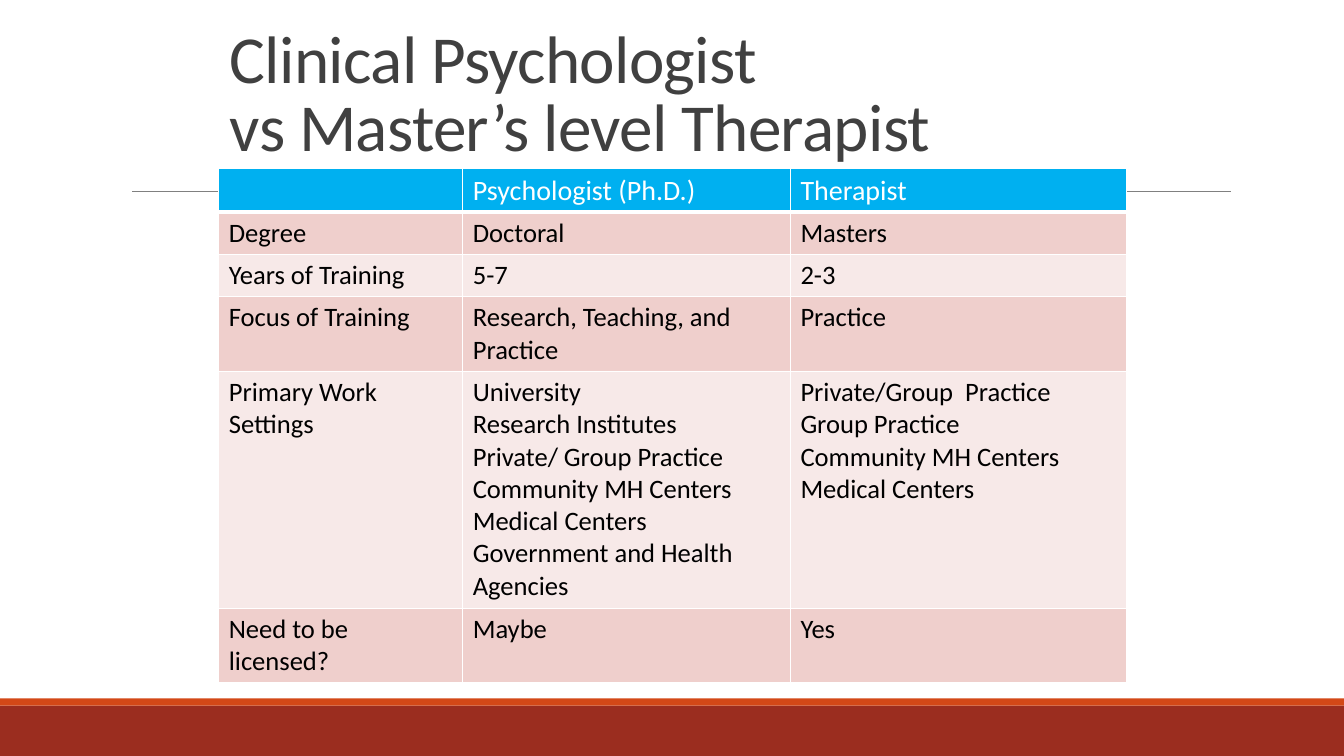
from lxml import etree
from pptx import Presentation
from pptx import util as u
from pptx.dml.color import RGBColor
from pptx.enum import shapes, text
from pptx.oxml.ns import qn

HEADER, BANDS = "00B0F0", ("F7E9E8", "EFCFCC")
COLS = (2.42, 3.25, 3.33)
HEIGHTS = (0.43, 0.42, 0.42, 0.74, 2.35, 0.74)
ROWS = [
    ("", "Psychologist (Ph.D.)", "Therapist"),
    ("Degree", "Doctoral", "Masters"),
    ("Years of Training", "5-7", "2-3"),
    ("Focus of Training", "Research, Teaching, and Practice", "Practice"),
    ("Primary Work Settings",
     "University\nResearch Institutes\nPrivate/ Group Practice\n"
     "Community MH Centers\nMedical Centers\nGovernment and Health Agencies",
     "Private/Group  Practice\nGroup Practice\nCommunity MH Centers\nMedical Centers"),
    ("Need to be licensed?", "Maybe", "Yes"),
]


def color(code):
    return RGBColor.from_string(code)


class Deck:
    font = "Calibri"

    def __init__(self):
        self.prs = Presentation()
        self.prs.slide_width, self.prs.slide_height = u.Inches(13.33), u.Inches(7.5)
        self.slide = self.prs.slides.add_slide(self.prs.slide_layouts[6])

    def run(self, para, words, size, code):
        run = para.add_run()
        run.text = words
        font = run.font
        font.name, font.size, font.bold = self.font, u.Pt(size), False
        font.color.rgb = color(code)
        return run

    def bar(self, top, height, code):
        box = self.slide.shapes.add_shape(
            shapes.MSO_SHAPE.RECTANGLE, 0, u.Inches(top),
            self.prs.slide_width, u.Inches(height))
        box.shadow.inherit = False
        box.fill.solid()
        box.fill.fore_color.rgb = color(code)
        box.line.fill.background()

    def rule(self, left, right, top, code, width):
        line = self.slide.shapes.add_connector(
            shapes.MSO_CONNECTOR.STRAIGHT, u.Inches(left), u.Inches(top),
            u.Inches(right), u.Inches(top))
        line.line.color.rgb = color(code)
        line.line.width = u.Pt(width)
        etree.SubElement(line._element.spPr, qn("a:effectLst"))

    def title(self, left, top, width, height, lines):
        box = self.slide.shapes.add_textbox(*map(u.Inches, (left, top, width, height)))
        frame = box.text_frame
        frame.word_wrap = True
        frame.vertical_anchor = text.MSO_ANCHOR.BOTTOM
        para = frame.paragraphs[0]
        para.line_spacing = 0.85
        for i, words in enumerate(lines):
            if i:
                para.add_line_break()
            run = self.run(para, words, 48, "404040")
            run.font._element.set("spc", "-50")

    def edges(self, cell, code, low):
        """Draw four 1 pt borders, the bottom one `low` points wide."""
        props = cell._tc.get_or_add_tcPr()
        for i, side in enumerate("LRTB"):
            width = u.Pt(low if side == "B" else 1)
            edge = etree.Element(qn("a:ln" + side), w=str(width))
            fill = etree.SubElement(edge, qn("a:solidFill"))
            etree.SubElement(fill, qn("a:srgbClr"), val=code)
            props.insert(i, edge)

    def table(self, left, top):
        grid = self.slide.shapes.add_table(
            len(ROWS), len(COLS), u.Inches(left), u.Inches(top),
            u.Inches(sum(COLS)), u.Inches(sum(HEIGHTS))).table
        for col, width in zip(grid.columns, COLS):
            col.width = u.Inches(width)
        for r, row in enumerate(ROWS):
            grid.rows[r].height = u.Inches(HEIGHTS[r])
            for c, words in enumerate(row):
                self.cell(grid.cell(r, c), words, r)

    def cell(self, cell, words, r):
        cell.fill.solid()
        cell.fill.fore_color.rgb = color(BANDS[r % 2] if r else HEADER)
        self.edges(cell, "FFFFFF", 1 if r else 3)
        frame = cell.text_frame
        for i, line in enumerate(words.splitlines()):
            para = frame.add_paragraph() if i else frame.paragraphs[0]
            self.run(para, line, 19 if r else 20, "000000" if r else "FFFFFF")


def main():
    deck = Deck()
    deck.bar(7, 0.5, "9B2D1F")
    deck.bar(6.93, 0.07, "D34817")
    deck.rule(1.31, 12.21, 1.9, "808080", 0.5)
    deck.title(2.18, 0.1, 8.25, 1.59,
               ("Clinical Psychologist", "vs Master’s level Therapist"))
    deck.table(2.17, 1.67)
    deck.prs.save("out.pptx")


if __name__ == "__main__":
    main()
